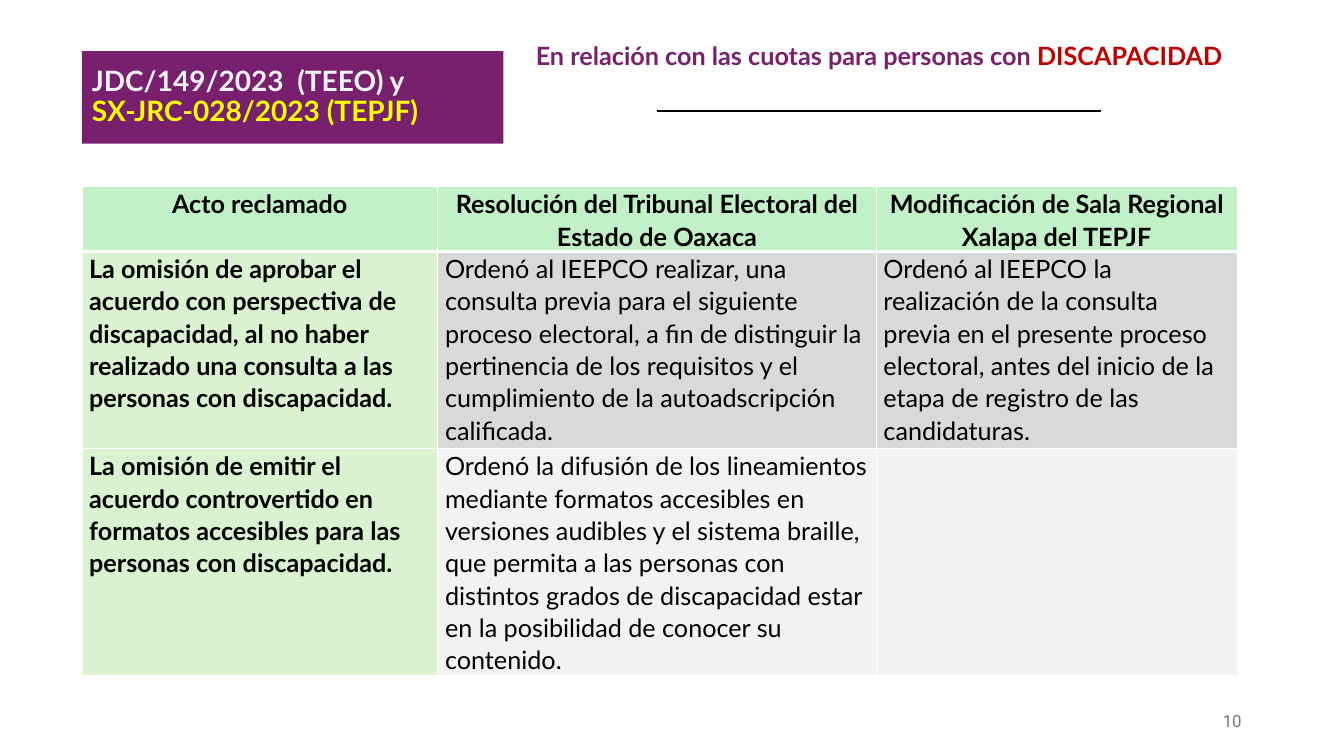
from lxml.etree import SubElement
from pptx import Presentation
from pptx.dml.color import RGBColor
from pptx.enum.shapes import MSO_SHAPE as Shape
from pptx.enum.text import MSO_ANCHOR as Anchor, PP_ALIGN as Align
from pptx.oxml.ns import qn
from pptx.util import Pt

PURPLE, RED, YELLOW = "78206E", "C00000", "FFFF00"
BLACK, WHITE, GREY = "000000", "FFFFFF", "797979"
HEADER_GREEN, ROW_GREEN = "C2F1C8", "D9F2D0"
DARK_BAND, LIGHT_BAND = "D9D9D9", "F2F2F2"

COLUMN_WIDTHS = (254.2, 313.2, 257.8)
ROW_HEIGHTS = (43.2, 141, 161.5)
RULINGS = (
    ("Acto reclamado",
     "Resolución del Tribunal Electoral del Estado de Oaxaca",
     "Modificación de Sala Regional Xalapa del TEPJF"),
    ("La omisión de aprobar el acuerdo con perspectiva de discapacidad, al no "
     "haber realizado una consulta a las personas con discapacidad.",
     "Ordenó al IEEPCO realizar, una consulta previa para el siguiente proceso "
     "electoral, a fin de distinguir la pertinencia de los requisitos y el "
     "cumplimiento de la autoadscripción calificada.",
     "Ordenó al IEEPCO la realización de la consulta previa en el presente "
     "proceso electoral, antes del inicio de la etapa de registro de las "
     "candidaturas."),
    ("La omisión de emitir el acuerdo controvertido en formatos accesibles para "
     "las personas con discapacidad.",
     "Ordenó la difusión de los lineamientos mediante formatos accesibles en "
     "versiones audibles y el sistema braille, que permita a las personas con "
     "distintos grados de discapacidad estar en la posibilidad de conocer su "
     "contenido.",
     ""),
)


def color(hex_code):
    return RGBColor.from_string(hex_code)


def style(run, size, hex_code, bold=False, font="Lato"):
    run.font.name = font
    run.font.size = Pt(size)
    run.font.bold = bold
    run.font.color.rgb = color(hex_code)


def write(paragraph, parts, size, bold=False, font="Lato", align=Align.LEFT):
    """Write (text, colour) parts one after another in a paragraph."""
    paragraph.alignment = align
    for index, (text, hex_code) in enumerate(parts):
        if index == 0:
            paragraph.text = text
        else:
            paragraph.add_run().text = text
        style(paragraph.runs[-1], size, hex_code, bold, font)


def add_text(slide, box, parts, size, anchor=Anchor.TOP, **options):
    frame = slide.shapes.add_textbox(*map(Pt, box)).text_frame
    frame.word_wrap = True
    frame.vertical_anchor = anchor
    write(frame.paragraphs[0], parts, size, **options)


def add_block(slide, box, fill):
    block = slide.shapes.add_shape(Shape.RECTANGLE, *map(Pt, box))
    block.shadow.inherit = False
    block.fill.solid()
    block.fill.fore_color.rgb = color(fill)
    block.line.fill.background()
    return block


def add_border(cell, side, width):
    border = SubElement(cell._tc.get_or_add_tcPr(), qn(f"a:ln{side}"), w=str(Pt(width)))
    fill = SubElement(border, qn("a:solidFill"))
    SubElement(fill, qn("a:srgbClr"), val=WHITE)


def fill_cell(cell, text, row, column):
    # Borders: a thicker one under the header
    for side in "LRTB":
        under_header = (row, side) in ((0, "B"), (1, "T"))
        add_border(cell, side, 3 if under_header else 1)

    # Background by row and column
    if row == 0:
        background = HEADER_GREEN
    elif column == 0:
        background = ROW_GREEN
    else:
        background = DARK_BAND if row == 1 else LIGHT_BAND
    cell.fill.solid()
    cell.fill.fore_color.rgb = color(background)

    # Text
    cell.margin_left = cell.margin_right = Pt(5.2)
    cell.margin_top = cell.margin_bottom = 0
    if text:
        paragraph = cell.text_frame.paragraphs[0]
        paragraph.line_spacing = 1.07
        paragraph.space_after = Pt(8)
        write(paragraph, [(text, BLACK)], 18, bold=row == 0 or column == 0,
              align=Align.CENTER if row == 0 else Align.LEFT)


def add_rulings_table(slide, left, top):
    size = sum(COLUMN_WIDTHS), sum(ROW_HEIGHTS)
    table = slide.shapes.add_table(len(ROW_HEIGHTS), len(COLUMN_WIDTHS),
                                   *map(Pt, (left, top, *size))).table
    for column, width in zip(table.columns, COLUMN_WIDTHS):
        column.width = Pt(width)
    for row, height in zip(table.rows, ROW_HEIGHTS):
        row.height = Pt(height)
    for row, texts in enumerate(RULINGS):
        for column, text in enumerate(texts):
            fill_cell(table.cell(row, column), text, row, column)


def main():
    deck = Presentation()
    deck.slide_width, deck.slide_height = Pt(960), Pt(540)
    slide = deck.slides.add_slide(deck.slide_layouts[6])

    # Heading and the rule below it
    rule = add_block(slide, (469.4, 79, 317, 0.7), BLACK)
    rule.line.color.rgb = color(BLACK)
    rule.line.width = Pt(0.75)
    add_text(slide, (365.8, 25.2, 524.2, 29),
             [("En relación con las cuotas para personas con ", PURPLE),
              ("DISCAPACIDAD", RED)], 18, bold=True, align=Align.CENTER)

    # Case numbers
    cases = add_block(slide, (58.5, 36.6, 301, 66), PURPLE).text_frame
    cases.word_wrap = True
    cases.vertical_anchor = Anchor.MIDDLE
    cases.paragraphs[0].line_spacing = 0.9
    write(cases.paragraphs[0],
          [("JDC/149/2023  (TEEO) y \v", LIGHT_BAND),
           ("SX-JRC-028/2023 (TEPJF)", YELLOW)], 20, bold=True)

    # Rulings
    add_rulings_table(slide, 58.5, 133.4)

    # Slide number
    add_text(slide, (678, 500.5, 216, 28.8), [("10", GREY)], 12,
             anchor=Anchor.MIDDLE, font="Roboto", align=Align.RIGHT)

    deck.save("out.pptx")


if __name__ == "__main__":
    main()
